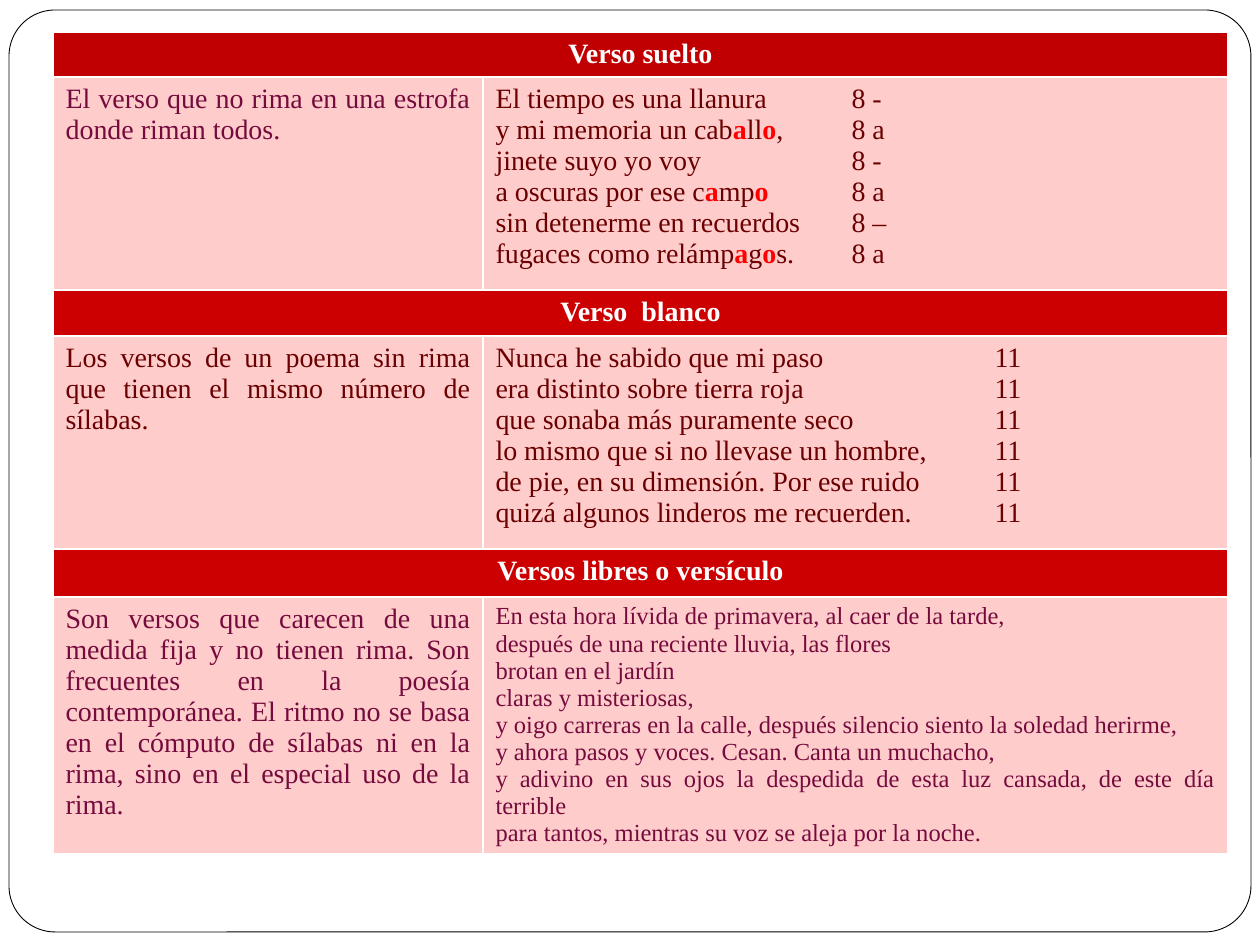
from lxml import etree
from pptx import Presentation
from pptx import util as u
from pptx.dml.color import RGBColor
from pptx.enum import shapes, text
from pptx.oxml import ns

PX = 914400 // 126
FONT = "Times New Roman"
COLORS = {
    "white": "FFFFFF", "black": "000000", "cell": "FFCCCC", "plum": "750B3D",
    "maroon": "6A0000", "rhyme": "FF0000", "dark_red": "C00000", "red": "CC0000",
}
FRAME = (9, 10, 1242, 922)
TABLE_ORIGIN = (53, 32)
COLUMNS = (430, 745)

SECTIONS = [
    {
        "title": "Verso suelto", "band": "dark_red", "heights": (45, 213),
        "definition": "El verso que no rima en una estrofa donde riman todos.",
        "colors": ("plum", "maroon"), "size": 16, "tab": 356,
        "verses": [
            "El tiempo es una llanura\t8 -",
            "y mi memoria un cab*a*ll*o*,\t8 a",
            "jinete suyo yo voy\t8 -",
            "a oscuras por ese c*a*mp*o*\t8 a",
            "sin detenerme en recuerdos\t8 –",
            "fugaces como relámp*a*g*o*s.\t8 a",
        ],
    },
    {
        "title": "Verso  blanco", "band": "red", "heights": (46, 213),
        "definition": "Los versos de un poema sin rima que tienen el mismo número de sílabas.",
        "colors": ("maroon", "maroon"), "size": 16, "tab": 499,
        "verses": [
            "Nunca he sabido que mi paso\t11",
            "era distinto sobre tierra roja\t11",
            "que sonaba más puramente seco\t11",
            "lo mismo que si no llevase un hombre,\t11",
            "de pie, en su dimensión. Por ese ruido\t11",
            "quizá algunos linderos me recuerden.\t11",
        ],
    },
    {
        "title": "Versos libres o versículo", "band": "red", "heights": (48, 256),
        "definition": "Son versos que carecen de una medida fija y no tienen rima. Son "
                      "frecuentes en la poesía contemporánea. El ritmo no se basa en el "
                      "cómputo de sílabas ni en la rima, sino en el especial uso de la rima.",
        "colors": ("plum", "plum"), "size": 14, "tab": None,
        "verses": [
            "En esta hora lívida de primavera, al caer de la tarde,",
            "después de una reciente lluvia, las flores",
            "brotan en el jardín",
            "claras y misteriosas,",
            "y oigo carreras en la calle, después silencio siento la soledad herirme,",
            "y ahora pasos y voces. Cesan. Canta un muchacho,",
            "y adivino en sus ojos la despedida de esta luz cansada, de este día terrible",
            "para tantos, mientras su voz se aleja por la noche.",
        ],
    },
]


def px(value):
    return u.Emu(value * PX)


def rgb(name):
    return RGBColor.from_string(COLORS[name])


def style_cell(cell, fill):
    properties = cell._tc.get_or_add_tcPr()
    for side in ("lnL", "lnR", "lnT", "lnB"):
        border = etree.SubElement(properties, ns.qn("a:" + side), w=str(u.Pt(1)))
        solid = etree.SubElement(border, ns.qn("a:solidFill"))
        etree.SubElement(solid, ns.qn("a:srgbClr"), val=COLORS["white"])
    cell.fill.solid()
    cell.fill.fore_color.rgb = rgb(fill)


def add_tab_stop(paragraph, position):
    properties = paragraph._p.get_or_add_pPr()
    stops = etree.SubElement(properties, ns.qn("a:tabLst"))
    etree.SubElement(stops, ns.qn("a:tab"), pos=str(px(position)), algn="l")


def write_lines(cell, lines, color, size=16, align=text.PP_ALIGN.JUSTIFY, bold=False, tab=None):
    frame = cell.text_frame
    for index, line in enumerate(lines):
        paragraph = frame.add_paragraph() if index else frame.paragraphs[0]
        paragraph.alignment = align
        if tab:
            add_tab_stop(paragraph, tab)
        for part, piece in enumerate(line.split("*")):
            if not piece:
                continue
            rhyme = part % 2 == 1
            run = paragraph.add_run()
            run.text = piece
            run.font.name = FONT
            run.font.size = u.Pt(size)
            run.font.bold = bold or rhyme
            run.font.color.rgb = rgb("rhyme" if rhyme else color)


def add_frame(slide):
    frame = slide.shapes.add_shape(shapes.MSO_SHAPE.ROUNDED_RECTANGLE, *map(px, FRAME))
    frame.adjustments[0] = 0.05
    frame.shadow.inherit = False
    frame.fill.solid()
    frame.fill.fore_color.rgb = rgb("white")
    frame.line.color.rgb = rgb("black")
    frame.line.width = u.Pt(0.5)


def add_verse_table(slide):
    heights = [height for section in SECTIONS for height in section["heights"]]
    size = (sum(COLUMNS), sum(heights))
    table = slide.shapes.add_table(
        len(heights), len(COLUMNS), *map(px, TABLE_ORIGIN + size)).table
    table.first_row = table.horz_banding = False
    for column, width in zip(table.columns, COLUMNS):
        column.width = px(width)
    for row, height in zip(table.rows, heights):
        row.height = px(height)

    for index, section in enumerate(SECTIONS):
        top = 2 * index
        for column in range(len(COLUMNS)):
            style_cell(table.cell(top, column), section["band"])
            style_cell(table.cell(top + 1, column), "cell")
        heading = table.cell(top, 0)
        heading.merge(table.cell(top, 1))
        write_lines(heading, [section["title"]], "white",
                    align=text.PP_ALIGN.CENTER, bold=True)
        definition_color, verse_color = section["colors"]
        write_lines(table.cell(top + 1, 0), [section["definition"]], definition_color)
        write_lines(table.cell(top + 1, 1), section["verses"], verse_color,
                    size=section["size"], tab=section["tab"])


def main():
    presentation = Presentation()
    presentation.slide_width, presentation.slide_height = px(1260), px(945)
    slide = presentation.slides.add_slide(presentation.slide_layouts[6])
    add_frame(slide)
    add_verse_table(slide)
    presentation.save("out.pptx")


if __name__ == "__main__":
    main()
